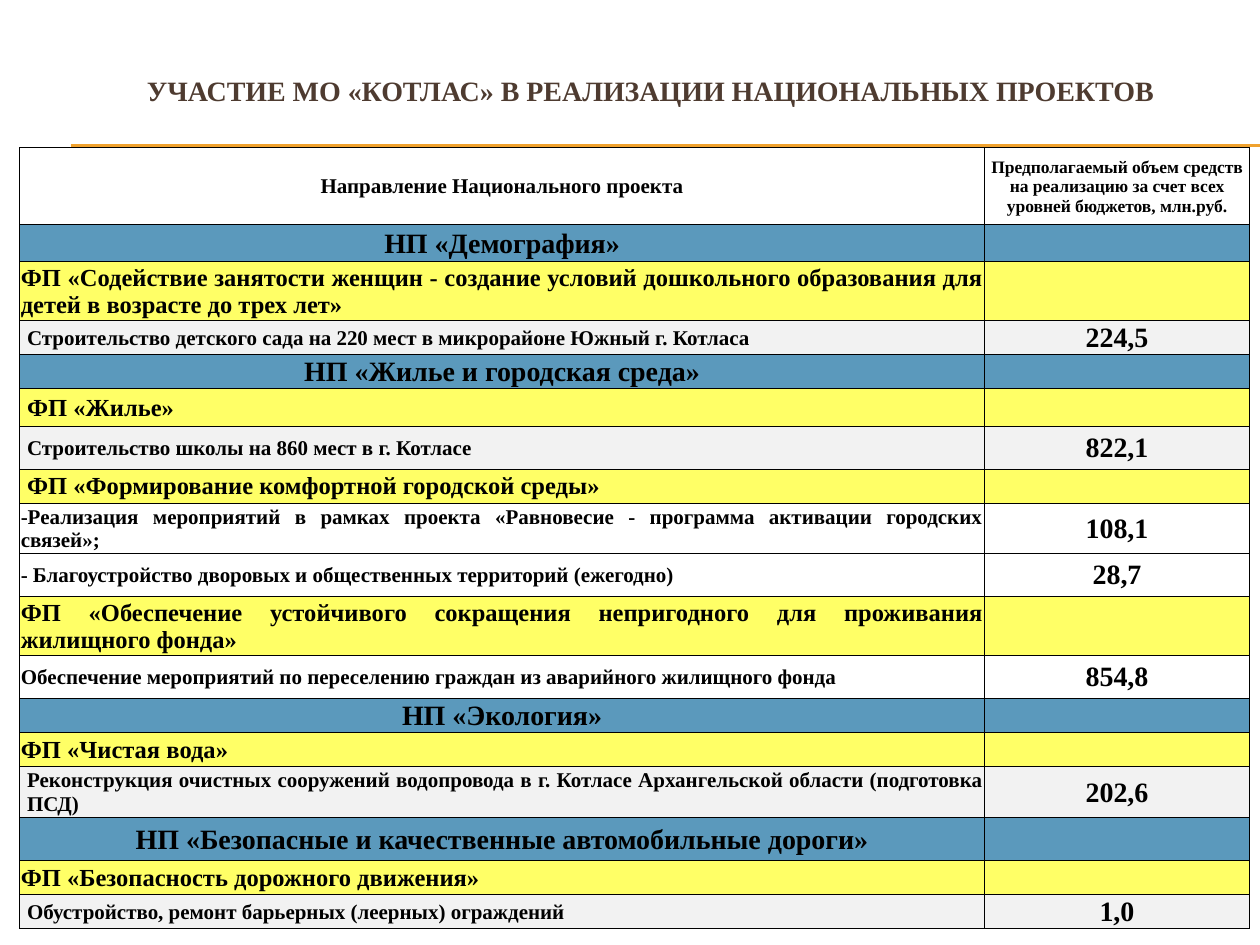
from dataclasses import dataclass
from lxml.etree import SubElement as Sub
from pptx import Presentation
from pptx.dml.color import RGBColor as Rgb
from pptx.enum.shapes import MSO_CONNECTOR as Link
from pptx.enum.text import MSO_ANCHOR as Anchor, MSO_AUTO_SIZE as Fit, PP_ALIGN as Align
from pptx.oxml.ns import qn
from pptx.util import Inches, Pt


@dataclass(frozen=True)
class Theme:
    font: str = "Times New Roman"
    ink: str = "000000"
    title: str = "4E3B30"
    rule: str = "F0A22E"
    blue: str = "5B99BC"
    gold: str = "FFFF66"
    grey: str = "F2F2F2"
    white: str = "FFFFFF"
    big: int = 16
    mid: int = 14
    base: int = 12
    small: int = 10
    thin: float = 0.75
    edge: float = 0.5


class Deck:
    def __init__(self, theme):
        self.theme = theme
        self.show = Presentation()
        self.show.slide_width, self.show.slide_height = Inches(10), Inches(7.5)
        self.slide = self.show.slides.add_slide(self.show.slide_layouts[5])

    def across(self, share):
        return round(self.show.slide_width * share / 100)

    def down(self, share):
        return round(self.show.slide_height * share / 100)

    def label(self, frame, text, size, align, color):
        para = frame.paragraphs[0]
        para.text = text
        para.alignment = align
        font = para.font
        font.name, font.size, font.bold = self.theme.font, Pt(size), True
        font.color.rgb = Rgb.from_string(color)
        return para

    def title(self, text, left, top, width, height):
        box = self.slide.shapes.title
        box.left, box.top = self.across(left), self.down(top)
        box.width, box.height = self.across(width), self.down(height)
        frame = box.text_frame
        frame.auto_size = Fit.NONE
        frame.word_wrap = True
        frame.vertical_anchor = Anchor.MIDDLE
        para = self.label(frame, text, self.theme.big, Align.CENTER, self.theme.title)
        para.line_spacing = 0.8

    def rule(self, left, top):
        y = self.down(top)
        line = self.slide.shapes.add_connector(
            Link.STRAIGHT, self.across(left), y, self.across(100), y)
        line.line.color.rgb = Rgb.from_string(self.theme.rule)
        line.line.width = Pt(self.theme.thin)
        Sub(line._element.spPr, qn("a:effectLst"))

    def border(self, cell):
        props = cell._tc.get_or_add_tcPr()
        for spot, side in enumerate(("lnL", "lnR", "lnT", "lnB")):
            line = Sub(props, qn("a:" + side), w=str(Pt(self.theme.edge)))
            fill = Sub(line, qn("a:solidFill"))
            Sub(fill, qn("a:srgbClr"), val=self.theme.ink)
            props.insert(spot, line)

    def cell(self, cell, text, size, align, fill, inset=0.01):
        cell.margin_left = Inches(inset)
        cell.margin_right = cell.margin_top = Inches(0.01)
        cell.margin_bottom = 0
        cell.vertical_anchor = Anchor.MIDDLE
        cell.fill.solid()
        cell.fill.fore_color.rgb = Rgb.from_string(fill)
        para = self.label(cell.text_frame, text, size, align, self.theme.ink)
        if not text:
            Sub(para._p, qn("a:endParaRPr"), sz=str(size * 100))
        self.border(cell)

    def table(self, rows, left, top, cols):
        kinds = {
            "head": (self.theme.base, Align.CENTER, self.theme.white),
            "plan": (self.theme.big, Align.CENTER, self.theme.blue),
            "part": (self.theme.mid, Align.JUSTIFY, self.theme.gold),
            "work": (self.theme.base, Align.JUSTIFY, self.theme.grey),
            "task": (self.theme.base, Align.JUSTIFY, self.theme.white),
        }
        high = sum(row[1] for row in rows)
        grid = self.slide.shapes.add_table(
            len(rows), len(cols), self.across(left), self.down(top),
            self.across(sum(cols)), Inches(high)).table
        grid.first_row = grid.horz_banding = False
        for col, width in zip(grid.columns, cols):
            col.width = self.across(width)
        for spot, (kind, tall, inset, text, value) in enumerate(rows):
            grid.rows[spot].height = Inches(tall)
            size, align, fill = kinds[kind]
            self.cell(grid.cell(spot, 0), text, size, align, fill, inset)
            size = self.theme.big if value else self.theme.small
            if kind == "head":
                size = self.theme.small
            self.cell(grid.cell(spot, 1), value, size, Align.CENTER, fill)


FLUSH, SHIFT = 0.01, 0.06
ROWS = [
    ("head", 0.61, FLUSH, "Направление Национального проекта",
     "Предполагаемый объем средств на реализацию за счет всех уровней бюджетов, млн.руб."),
    ("plan", 0.29, FLUSH, "НП «Демография»", ""),
    ("part", 0.47, FLUSH, "ФП «Содействие занятости женщин - создание условий "
     "дошкольного образования для детей в возрасте до трех лет»", ""),
    ("work", 0.27, SHIFT,
     "Строительство детского сада на 220 мест в микрорайоне Южный г. Котласа", "224,5"),
    ("plan", 0.27, FLUSH, "НП «Жилье и городская среда»", ""),
    ("part", 0.3, SHIFT, "ФП «Жилье»", ""),
    ("work", 0.34, SHIFT, "Строительство школы на 860 мест в г. Котласе", "822,1"),
    ("part", 0.27, SHIFT, "ФП «Формирование комфортной городской среды»", ""),
    ("task", 0.4, FLUSH, "-Реализация мероприятий в рамках проекта "
     "«Равновесие - программа активации городских связей»;", "108,1"),
    ("task", 0.34, FLUSH,
     "- Благоустройство дворовых и общественных территорий (ежегодно)", "28,7"),
    ("part", 0.47, FLUSH, "ФП «Обеспечение устойчивого сокращения "
     "непригодного для проживания жилищного фонда»", ""),
    ("task", 0.34, FLUSH, "Обеспечение мероприятий по переселению граждан "
     "из аварийного жилищного фонда", "854,8"),
    ("plan", 0.27, FLUSH, "НП «Экология»", ""),
    ("part", 0.27, FLUSH, "ФП «Чистая вода»", ""),
    ("work", 0.41, SHIFT, "Реконструкция очистных сооружений водопровода "
     "в г. Котласе Архангельской области (подготовка ПСД)", "202,6"),
    ("plan", 0.34, FLUSH, "НП «Безопасные и качественные автомобильные дороги»", ""),
    ("part", 0.27, FLUSH, "ФП «Безопасность дорожного движения»", ""),
    ("work", 0.27, SHIFT, "Обустройство, ремонт барьерных (леерных) ограждений", "1,0"),
]


def main():
    deck = Deck(Theme())
    for top in (15.3, 15.45):
        deck.rule(5.6, top)
    deck.title("УЧАСТИЕ МО «КОТЛАС» В РЕАЛИЗАЦИИ НАЦИОНАЛЬНЫХ ПРОЕКТОВ",
               8.3, 7.7, 86.7, 4.4)
    deck.table(ROWS, 1.55, 15.65, (76.6, 21))
    deck.show.save("out.pptx")


if __name__ == "__main__":
    main()
